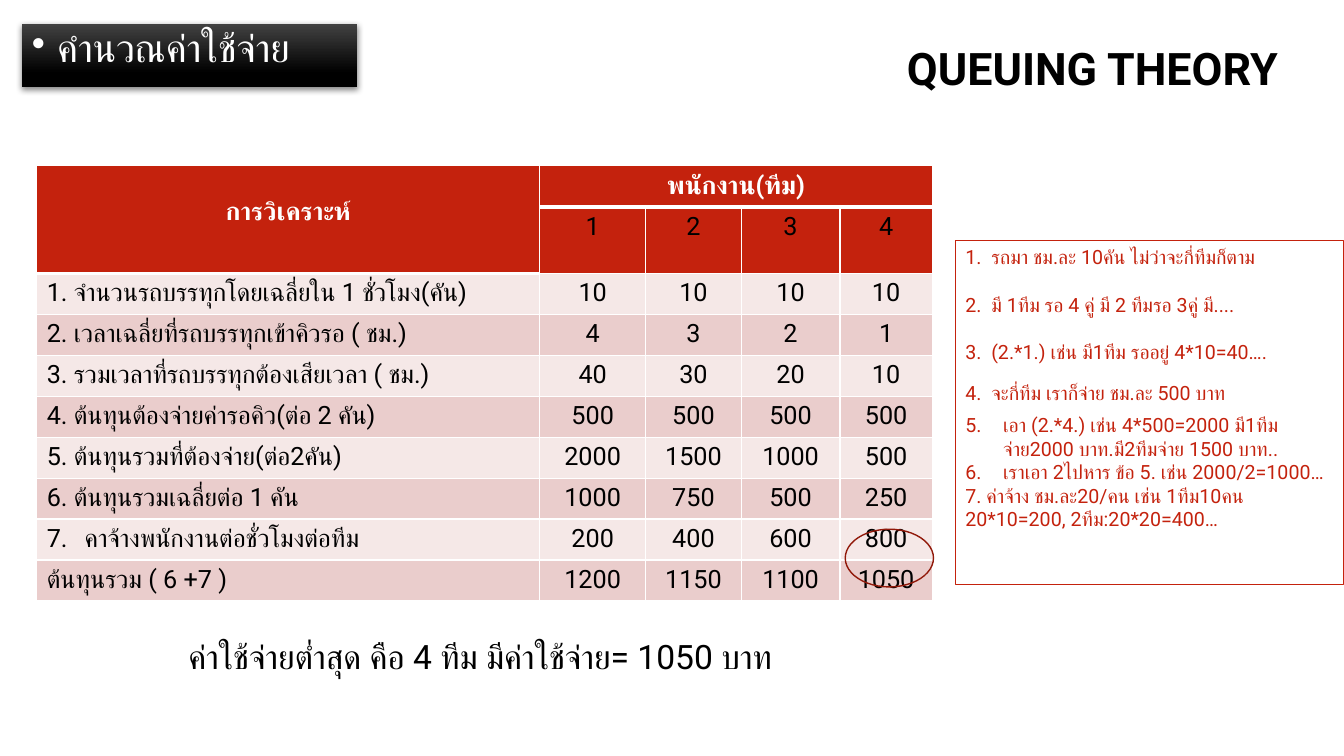
from lxml import etree
from pptx import Presentation
from pptx.dml.color import RGBColor
from pptx.enum.shapes import MSO_SHAPE
from pptx.enum.text import MSO_ANCHOR, PP_ALIGN
from pptx.oxml.ns import qn
from pptx.util import Pt

PX = 9525
LEFT, CENTER, RIGHT = PP_ALIGN.LEFT, PP_ALIGN.CENTER, PP_ALIGN.RIGHT
TOP, MIDDLE = MSO_ANCHOR.TOP, MSO_ANCHOR.MIDDLE
RECTANGLE, OVAL = MSO_SHAPE.RECTANGLE, MSO_SHAPE.OVAL

BLACK = RGBColor(0x00, 0x00, 0x00)
WHITE = RGBColor(0xFF, 0xFF, 0xFF)
GRAPHITE = RGBColor(0x41, 0x41, 0x41)
RED = RGBColor(0xC4, 0x22, 0x0D)
DARK_RED = RGBColor(0x91, 0x19, 0x0A)
BANDS = (RGBColor(0xF5, 0xE8, 0xE7), RGBColor(0xEA, 0xCD, 0xCC))
FONT = "Roboto"

COLUMN_WIDTHS = (479, 101, 91, 94, 88)
ROW_HEIGHTS = (39, 61) + (39,) * 8
TEAMS = ("1", "2", "3", "4")
COSTS = (
    ("1. จำนวนรถบรรทุกโดยเฉลี่ยใน 1 ชั่วโมง(คัน)", 10, 10, 10, 10),
    ("2. เวลาเฉลี่ยที่รถบรรทุกเข้าคิวรอ ( ชม.)", 4, 3, 2, 1),
    ("3. รวมเวลาที่รถบรรทุกต้องเสียเวลา ( ชม.)", 40, 30, 20, 10),
    ("4. ต้นทุนต้องจ่ายค่ารอคิว(ต่อ 2 คัน)", 500, 500, 500, 500),
    ("5. ต้นทุนรวมที่ต้องจ่าย(ต่อ2คัน)", 2000, 1500, 1000, 500),
    ("6. ต้นทุนรวมเฉลี่ยต่อ 1 คัน", 1000, 750, 500, 250),
    ("คาจ้างพนักงานต่อชั่วโมงต่อทีม", 200, 400, 600, 800),
    ("ต้นทุนรวม ( 6 +7 )", 1200, 1150, 1100, 1050),
)
WAGE_ROW = 6
# Text, space before in points, first automatic number
NOTES = (
    ("1.  รถมา ชม.ละ 10คัน ไม่ว่าจะกี่ทีมก็ตาม", 0, None),
    ("2.  มี 1ทีม รอ 4 คู่ มี 2 ทีมรอ 3คู่ มี....", 17, None),
    ("3.  (2.*1.) เช่น มี1ทีม รออยู่ 4*10=40….", 17, None),
    ("4.  จะกี่ทีม เราก็จ่าย ชม.ละ 500 บาท", 12.5, None),
    ("เอา (2.*4.) เช่น 4*500=2000 มี1ทีมจ่าย2000 บาท.มี2ทีมจ่าย 1500 บาท..", 6, 5),
    ("เราเอา 2ไปหาร ข้อ 5. เช่น 2000/2=1000…", 0, 5),
    ("7. ค่าจ้าง ชม.ละ20/คน เช่น 1ทีม10คน 20*10=200, 2ทีม:20*20=400…", 0, None),
)


def scaled(box):
    return [length * PX for length in box]


def write(para, text, size, color, bold=False, **layout):
    """Fill a paragraph with one styled span."""
    for name, value in layout.items():
        setattr(para, name, value)
    span = para.add_run()
    span.text = text
    for name, value in {"name": FONT, "size": Pt(size), "bold": bold}.items():
        setattr(span.font, name, value)
    span.font.color.rgb = color
    # Thai letters take the complex-script font
    etree.SubElement(span.font._element, qn("a:cs"), typeface=FONT)


def add_marker(para, indent, tag, **values):
    """Give a paragraph a hanging bullet or number."""
    properties = para._p.get_or_add_pPr()
    properties.set("marL", str(indent * PX))
    properties.set("indent", str(-indent * PX))
    etree.SubElement(properties, qn(tag), **values)


def add_number(para, start):
    add_marker(para, 36, "a:buAutoNum", type="arabicPeriod", startAt=str(start))


def add_text(page, box, text, size, anchor=TOP, **layout):
    frame = page.shapes.add_textbox(*scaled(box)).text_frame
    frame.word_wrap = True
    frame.vertical_anchor = anchor
    write(frame.paragraphs[0], text, size, BLACK, **layout)


def add_outline(page, preset, box, color, width):
    shape = page.shapes.add_shape(preset, *scaled(box))
    shape.shadow.inherit = False
    shape.fill.background()
    shape.line.color.rgb = color
    shape.line.width = Pt(width)
    return shape


def add_tag(page, box):
    """Black gradient label with a soft shadow."""
    tag = page.shapes.add_shape(RECTANGLE, *scaled(box))
    tag.line.fill.background()
    tag.fill.gradient()
    tag.fill.gradient_angle = 270
    for stop, color, position in zip(tag.fill.gradient_stops, (GRAPHITE, BLACK), (0, 0.78)):
        stop.color.rgb = color
        stop.position = position
    tag.shadow.inherit = False
    effects = tag._element.spPr.find(qn("a:effectLst"))
    shadow = etree.SubElement(effects, qn("a:outerShdw"), blurRad=str(Pt(4.5)),
                              dist=str(Pt(1.5)), dir="5400000", rotWithShape="0")
    tint = etree.SubElement(shadow, qn("a:srgbClr"), val=str(BLACK))
    etree.SubElement(tint, qn("a:alpha"), val="48000")
    tag.text_frame.vertical_anchor = TOP
    tag.text_frame.word_wrap = True
    para = tag.text_frame.paragraphs[0]
    para.line_spacing = 0.9
    add_marker(para, 24, "a:buChar", char="•")
    write(para, "คำนวณค่าใช้จ่าย", 28, WHITE, alignment=LEFT)


def style_cell(cell, color, bottom=1):
    """Fill a cell and rule it in white."""
    cell.fill.solid()
    cell.fill.fore_color.rgb = color
    properties = cell._tc.get_or_add_tcPr()
    for place, side in enumerate("LRTB"):
        width = bottom if side == "B" else 1
        line = etree.Element(qn("a:ln" + side), w=str(Pt(width)))
        fill = etree.SubElement(line, qn("a:solidFill"))
        etree.SubElement(fill, qn("a:srgbClr"), val=str(WHITE))
        properties.insert(place, line)


def add_cost_table(page, left, top):
    size = (sum(COLUMN_WIDTHS), sum(ROW_HEIGHTS))
    frame = page.shapes.add_table(len(ROW_HEIGHTS), len(COLUMN_WIDTHS),
                                  *scaled((left, top, *size)))
    table = frame.table
    for column, width in zip(table.columns, COLUMN_WIDTHS):
        column.width = width * PX
    for row, height in zip(table.rows, ROW_HEIGHTS):
        row.height = height * PX

    # Header
    for index in range(len(COLUMN_WIDTHS)):
        style_cell(table.cell(0, index), RED, 3)
        style_cell(table.cell(1, index), RED, 1 if index else 3)
    table.cell(0, 0).merge(table.cell(1, 0))
    table.cell(0, 1).merge(table.cell(0, 4))
    table.cell(0, 0).margin_top = 30 * PX
    for index, title in enumerate(("การวิเคราะห์", "พนักงาน(ทีม)")):
        para = table.cell(0, index).text_frame.paragraphs[0]
        write(para, title, 18, WHITE, True, alignment=CENTER)
    for index, team in enumerate(TEAMS, 1):
        write(table.cell(1, index).text_frame.paragraphs[0], team, 18, BLACK, alignment=CENTER)

    # Cost rows
    for row, values in enumerate(COSTS):
        for index, value in enumerate(values):
            cell = table.cell(row + 2, index)
            style_cell(cell, BANDS[row % 2])
            para = cell.text_frame.paragraphs[0]
            if row == WAGE_ROW and index == 0:
                add_number(para, 7)
            write(para, str(value), 18, BLACK, alignment=CENTER if index else LEFT)


def add_notes_box(page, box):
    frame = add_outline(page, RECTANGLE, box, RED, 0.75).text_frame
    frame.word_wrap = True
    frame.vertical_anchor = TOP
    for index, (text, gap, start) in enumerate(NOTES):
        para = frame.add_paragraph() if index else frame.paragraphs[0]
        if gap:
            para.space_before = Pt(gap)
        if start:
            add_number(para, start)
        write(para, text, 14, RED, alignment=LEFT)


def main():
    deck = Presentation()
    deck.slide_width, deck.slide_height = scaled((1280, 720))
    page = deck.slides.add_slide(deck.slide_layouts[6])
    add_text(page, (323, 0, 904, 135), "QUEUING THEORY", 32, MIDDLE,
             bold=True, alignment=RIGHT, line_spacing=0.9)
    add_tag(page, (21, 23, 319, 60))
    add_cost_table(page, 35, 158)
    add_notes_box(page, (910, 229, 370, 328))
    add_text(page, (170, 601, 672, 48), "ค่าใช้จ่ายต่ำสุด คือ 4 ทีม มีค่าใช้จ่าย= 1050 บาท", 24)
    # Ring around the lowest total
    add_outline(page, OVAL, (805, 504, 84, 55), DARK_RED, 1)
    deck.save("out.pptx")


if __name__ == "__main__":
    main()
